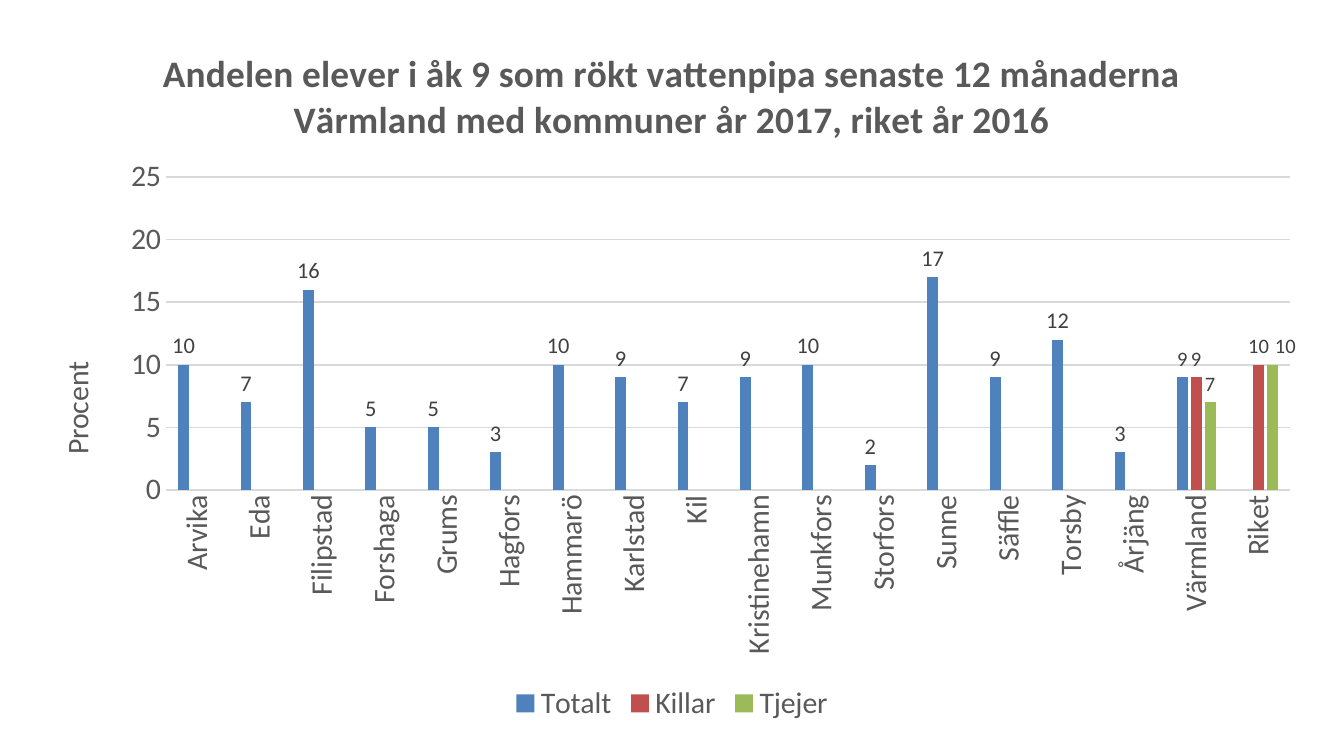
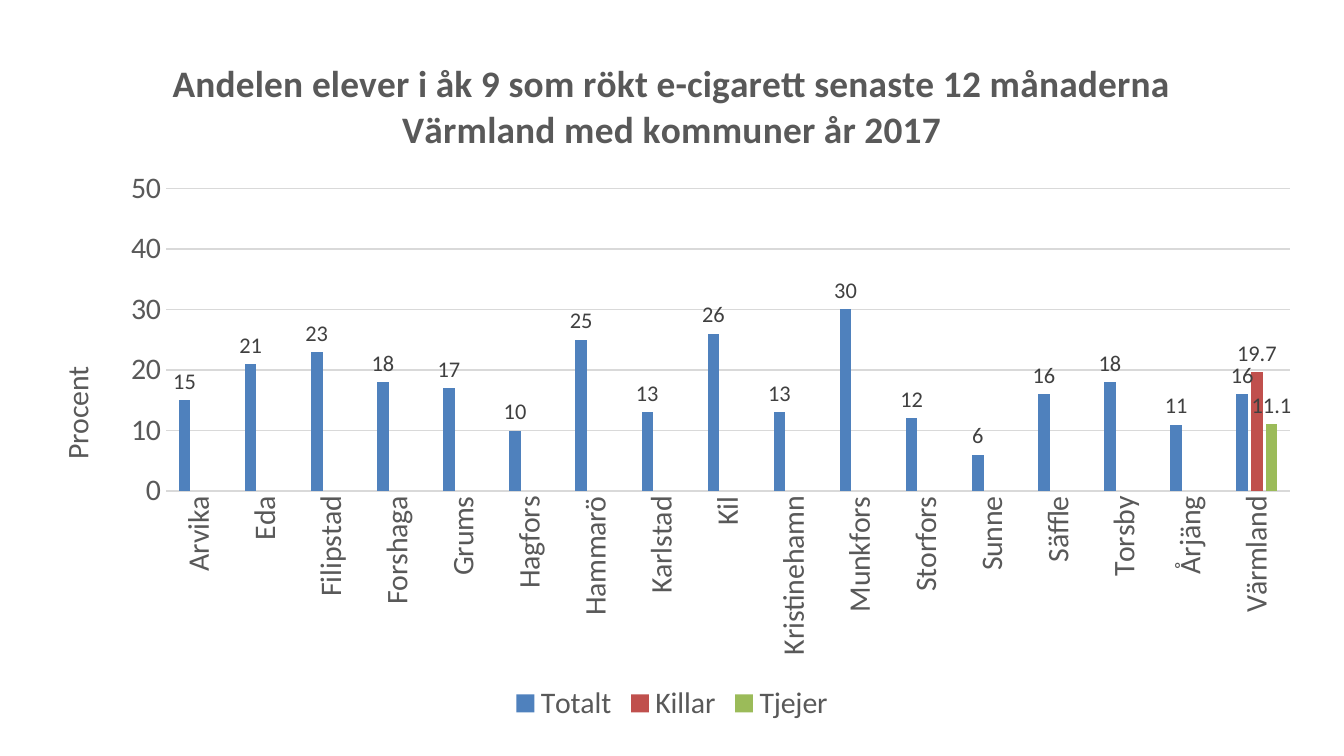
"""Two column charts on smoking habits among pupils in the municipalities of Värmland."""
from lxml.etree import SubElement
from pptx import Presentation
from pptx.chart.data import CategoryChartData
from pptx.dml.color import RGBColor
from pptx.enum.chart import (XL_CHART_TYPE, XL_LABEL_POSITION, XL_LEGEND_POSITION,
                             XL_TICK_MARK)
from pptx.oxml.ns import qn
from pptx.util import Inches, Pt

FONT = "Calibri"
BLACK = RGBColor(0x00, 0x00, 0x00)
GREY = RGBColor(0x59, 0x59, 0x59)
LABEL_GREY = RGBColor(0x40, 0x40, 0x40)
LINE_GREY = RGBColor(0xD9, 0xD9, 0xD9)
BLUE = RGBColor(0x4F, 0x81, 0xBD)
RED = RGBColor(0xC0, 0x50, 0x4D)
GREEN = RGBColor(0x9B, 0xBB, 0x59)
SERIES_COLORS = {"Totalt": BLUE, "Killar": RED, "Tjejer": GREEN}

MUNICIPALITIES = ["Arvika", "Eda", "Filipstad", "Forshaga", "Grums", "Hagfors",
                  "Hammarö", "Karlstad", "Kil", "Kristinehamn", "Munkfors", "Storfors",
                  "Sunne", "Säffle", "Torsby", "Årjäng"]
NO_SPLIT = [None] * len(MUNICIPALITIES)


def set_font(font, size=16, color=GREY, bold=False):
    font.name = FONT
    font.size = Pt(size)
    font.bold = bold
    font.color.rgb = color


def write(frame, text, **style):
    span = frame.paragraphs[0].add_run()
    span.text = text
    set_font(span.font, **style)


def place(parent, index, modes, **percents):
    """Give a chart part a manual layout, inserted as its child number index."""
    for old in parent.findall(qn("c:layout")):
        parent.remove(old)
    layout = parent.makeelement(qn("c:layout"))
    manual = SubElement(layout, qn("c:manualLayout"))
    for name, mode in modes.items():
        SubElement(manual, qn("c:" + name)).set("val", mode)
    for name, percent in percents.items():
        SubElement(manual, qn("c:" + name)).set("val", str(percent / 100))
    parent.insert(index, layout)


class ChartDeck:
    """Holds the style, the grid and the current page."""

    COLUMNS, ROWS = 50, 80
    EDGES = {"xMode": "edge", "yMode": "edge"}

    def __init__(self):
        self.deck = Presentation()
        self.deck.slide_width = Inches(10)
        self.deck.slide_height = self.deck.slide_width * 9 // 16
        self.page = None

    def add_page(self):
        self.page = self.deck.slides.add_slide(self.deck.slide_layouts[6])

    def add_columns(self, title, categories, values, top, rows, plot_top, plot_height,
                    maximum, step, split_size):
        data = CategoryChartData()
        data.categories = categories
        for name, numbers in values.items():
            data.add_series(name, numbers)
        column = self.deck.slide_width / self.COLUMNS
        row = self.deck.slide_height / self.ROWS
        chart = self.page.shapes.add_chart(
            XL_CHART_TYPE.COLUMN_CLUSTERED, int(column), int(top * row),
            int(48 * column), int(rows * row), data).chart
        set_font(chart.font, color=BLACK)
        chart.has_title = True
        write(chart.chart_title.text_frame, title, size=20, bold=True)
        chart.has_legend = True
        chart.legend.position = XL_LEGEND_POSITION.BOTTOM
        chart.legend.include_in_layout = False
        set_font(chart.legend.font)
        self.format_axes(chart, maximum, step)
        self.format_series(chart.plots[0], split_size)
        place(chart.element.xpath(".//c:plotArea")[0], 0,
              {"layoutTarget": "inner", **self.EDGES},
              x=10.8, y=plot_top, w=87.1, h=plot_height)
        return chart

    def format_axes(self, chart, maximum, step):
        names, scale = chart.category_axis, chart.value_axis
        for axis in (names, scale):
            axis.major_tick_mark = axis.minor_tick_mark = XL_TICK_MARK.NONE
            set_font(axis.tick_labels.font)
        names.has_major_gridlines = False
        scale.has_major_gridlines = True
        for line in (names.format.line, scale.major_gridlines.format.line):
            line.color.rgb = LINE_GREY
            line.width = Pt(0.75)
        scale.format.line.fill.background()
        scale.minimum_scale = 0
        scale.maximum_scale = maximum
        scale.major_unit = step
        scale.tick_labels.number_format = "0"
        scale.tick_labels.number_format_is_linked = False
        scale.has_title = True
        write(scale.axis_title.text_frame, "Procent")
        place(chart.element.xpath(".//c:valAx/c:title")[0], 1, self.EDGES, x=1.9, y=47.6)
        for body in chart.element.xpath(
                ".//c:catAx/c:txPr/a:bodyPr | .//c:valAx/c:title//a:bodyPr"):
            body.set("rot", "-5400000")
            body.set("vert", "horz")

    def format_series(self, plot, split_size):
        plot.gap_width = 219
        plot.overlap = -27
        plot.vary_by_categories = False
        for series in plot.series:
            is_total = series.name == "Totalt"
            series.format.fill.solid()
            series.format.fill.fore_color.rgb = SERIES_COLORS[series.name]
            labels = series.data_labels
            labels.show_value = True
            labels.position = XL_LABEL_POSITION.OUTSIDE_END
            labels.number_format = "0" if is_total else "General"
            labels.number_format_is_linked = False
            set_font(labels.font, size=12 if is_total else split_size, color=LABEL_GREY)

    def format_point_label(self, chart, series_index, point_index, shift=0):
        label = chart.plots[0].series[series_index].points[point_index].data_label
        set_font(label.font, size=11, color=LABEL_GREY)
        label.position = XL_LABEL_POSITION.OUTSIDE_END
        if shift:
            element = chart.element.xpath(f".//c:dLbl[c:idx/@val='{point_index}']")[0]
            place(element, 1, {}, x=shift, y=0)


def main():
    builder = ChartDeck()
    builder.add_page()
    water_pipe = builder.add_columns(
        "Andelen elever i åk 9 som rökt vattenpipa senaste 12 månaderna "
        "Värmland med kommuner år 2017, riket år 2016",
        MUNICIPALITIES + ["Värmland", "Riket"],
        {"Totalt": [10, 7, 16, 5, 5, 3, 10, 9, 7, 9, 10, 2, 17, 9, 12, 3, 9, None],
         "Killar": NO_SPLIT + [9, 10],
         "Tjejer": NO_SPLIT + [7, 10]},
        top=2, rows=75, plot_top=22.3, plot_height=44.2,
        maximum=25, step=5, split_size=11)
    builder.format_point_label(water_pipe, 0, 16)
    builder.format_point_label(water_pipe, 2, 17, shift=1)

    builder.add_page()
    builder.add_columns(
        "Andelen elever i åk 9 som rökt e-cigarett senaste 12 månaderna "
        "Värmland med kommuner år 2017",
        MUNICIPALITIES + ["Värmland"],
        {"Totalt": [15, 21, 23, 18, 17, 10, 25, 13, 26, 13, 30, 12, 6, 16, 18, 11, 16],
         "Killar": NO_SPLIT + [19.7],
         "Tjejer": NO_SPLIT + [11.1]},
        top=3, rows=74, plot_top=22.9, plot_height=43.3,
        maximum=50, step=10, split_size=12)
    builder.deck.save("out.pptx")


if __name__ == "__main__":
    main()
